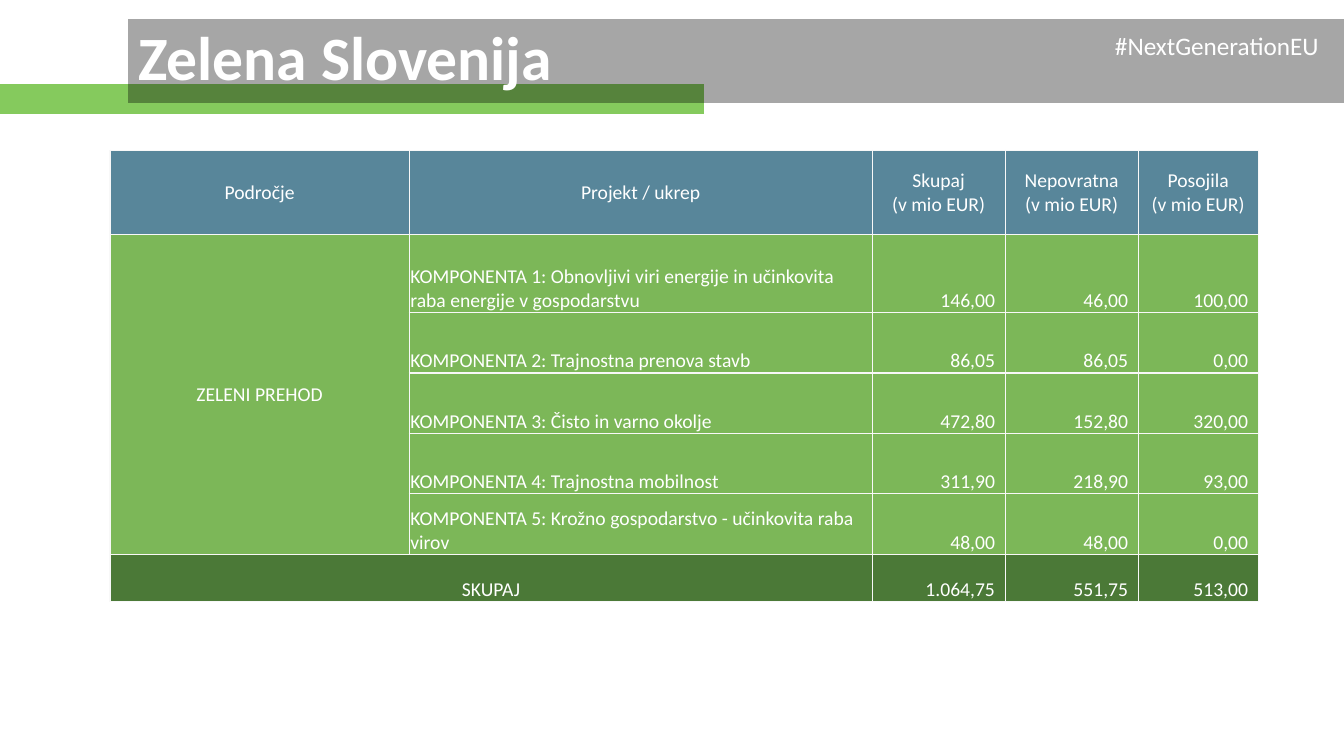
from dataclasses import dataclass

from lxml.etree import SubElement
from pptx import Presentation
from pptx.dml.color import RGBColor
from pptx.enum.shapes import MSO_SHAPE
from pptx.enum.text import MSO_ANCHOR, MSO_AUTO_SIZE, PP_ALIGN
from pptx.oxml.ns import qn
from pptx.util import Inches, Pt


@dataclass(frozen=True)
class Theme:
    """Colours, font and type sizes of the slide."""
    font: str = "Calibri"
    white: str = "FFFFFF"
    black: str = "000000"
    accent: str = "85CA5D"
    header: str = "58869A"
    component: str = "7CB758"
    total: str = "4B7937"
    border: str = "F8F8F8"
    title_size: int = 44
    tag_size: int = 18
    table_size: int = 14


THEME = Theme()
COLUMNS = [2.97, 4.59, 1.32, 1.32, 1.19]
ROWS = [0.84, 0.77, 0.6, 0.6, 0.6, 0.6, 0.47]
HEADINGS = ["Področje", "Projekt / ukrep", "Skupaj\n(v mio EUR)",
            "Nepovratna\n(v mio EUR)", "Posojila\n(v mio EUR)"]
COMPONENTS = [
    ["ZELENI PREHOD", "KOMPONENTA 1: Obnovljivi viri energije in učinkovita raba energije v gospodarstvu",
     "146,00", "46,00", "100,00"],
    ["", "KOMPONENTA 2: Trajnostna prenova stavb", "86,05", "86,05", "0,00"],
    ["", "KOMPONENTA 3: Čisto in varno okolje", "472,80", "152,80", "320,00"],
    ["", "KOMPONENTA 4: Trajnostna mobilnost", "311,90", "218,90", "93,00"],
    ["", "KOMPONENTA 5: Krožno gospodarstvo - učinkovita raba virov", "48,00", "48,00", "0,00"],
]
TOTALS = ["SKUPAJ", "", "1.064,75", "551,75", "513,00"]


def write_text(frame, text, size, align=PP_ALIGN.LEFT, bold=False, spacing=1.0):
    """Write each line of text as a formatted paragraph."""
    frame.text = text
    for paragraph in frame.paragraphs:
        paragraph.alignment = align
        paragraph.line_spacing = spacing
        paragraph.font.name = THEME.font
        paragraph.font.size = Pt(size)
        paragraph.font.bold = bold
        paragraph.font.color.rgb = RGBColor.from_string(THEME.white)


def fill_solid(target, color):
    """Give a shape or a cell a plain fill."""
    target.fill.solid()
    target.fill.fore_color.rgb = RGBColor.from_string(color)


def add_banner(slide, left, top, width, height):
    """Place the title band, the green bar across its lower edge and the hashtag."""
    title = slide.shapes.title
    title.left, title.top = Inches(left), Inches(top)
    title.width, title.height = Inches(width), Inches(height)
    fill_solid(title, THEME.black)
    band_color = title.element.spPr.find(qn("a:solidFill"))[0]
    SubElement(band_color, qn("a:alpha"), val="35000")
    frame = title.text_frame
    frame.auto_size = MSO_AUTO_SIZE.NONE
    frame.vertical_anchor = MSO_ANCHOR.MIDDLE
    write_text(frame, "Zelena Slovenija", THEME.title_size, bold=True, spacing=0.9)

    bar = slide.shapes.add_shape(MSO_SHAPE.FLOWCHART_PROCESS, 0, Inches(top + 0.64),
                                 Inches(6.98), Inches(0.3))
    bar.shadow.inherit = False
    fill_solid(bar, THEME.accent)
    bar.line.fill.background()
    title.element.addprevious(bar.element)

    hashtag = slide.shapes.add_textbox(Inches(left + width - 2.37), Inches(top + 0.06),
                                       Inches(2.25), Inches(0.4)).text_frame
    hashtag.word_wrap = False
    hashtag.auto_size = MSO_AUTO_SIZE.SHAPE_TO_FIT_TEXT
    write_text(hashtag, "#NextGenerationEU", THEME.tag_size)


def style_cell(cell, color, anchor, right_margin):
    """Set the borders, fill, margins and anchor of a cell."""
    properties = cell._tc.get_or_add_tcPr()
    for side in ("lnL", "lnR", "lnT", "lnB"):
        line = SubElement(properties, qn(f"a:{side}"), w=str(Pt(1)))
        line_fill = SubElement(line, qn("a:solidFill"))
        SubElement(line_fill, qn("a:srgbClr"), val=THEME.border)
    fill_solid(cell, color)
    cell.margin_left = cell.margin_top = Inches(0.01)
    cell.margin_right, cell.margin_bottom = Inches(right_margin), 0
    cell.vertical_anchor = anchor


def add_funding_table(slide, left, top):
    """Place the table of components, grants and loans."""
    records = [HEADINGS, *COMPONENTS, TOTALS]
    last = len(records) - 1
    table = slide.shapes.add_table(len(ROWS), len(COLUMNS), Inches(left), Inches(top),
                                   Inches(sum(COLUMNS)), Inches(sum(ROWS))).table
    for column, width in zip(table.columns, COLUMNS):
        column.width = Inches(width)
    for row, height in zip(table.rows, ROWS):
        row.height = Inches(height)
    table.cell(1, 0).merge(table.cell(last - 1, 0))
    table.cell(last, 0).merge(table.cell(last, 1))

    for row_index, record in enumerate(records):
        color = {0: THEME.header, last: THEME.total}.get(row_index, THEME.component)
        for column_index, text in enumerate(record):
            cell = table.cell(row_index, column_index)
            is_heading = row_index == 0
            is_amount = column_index > 1 and not is_heading
            is_area = column_index == 0 and row_index < last
            anchor = MSO_ANCHOR.MIDDLE if is_heading or is_area else MSO_ANCHOR.BOTTOM
            if is_amount:
                align = PP_ALIGN.RIGHT
            elif is_heading or column_index == 0:
                align = PP_ALIGN.CENTER
            else:
                align = PP_ALIGN.LEFT
            style_cell(cell, color, anchor, 0.1 if is_amount else 0.01)
            if not cell.is_spanned:
                write_text(cell.text_frame, text, THEME.table_size, align)


def main():
    """Build and save the slide."""
    deck = Presentation()
    deck.slide_width, deck.slide_height = Inches(13.33), Inches(7.5)
    slide = deck.slides.add_slide(deck.slide_layouts[5])
    add_banner(slide, 1.27, 0.19, 12.06, 0.83)
    add_funding_table(slide, 1.09, 1.49)
    deck.save("out.pptx")


if __name__ == "__main__":
    main()
